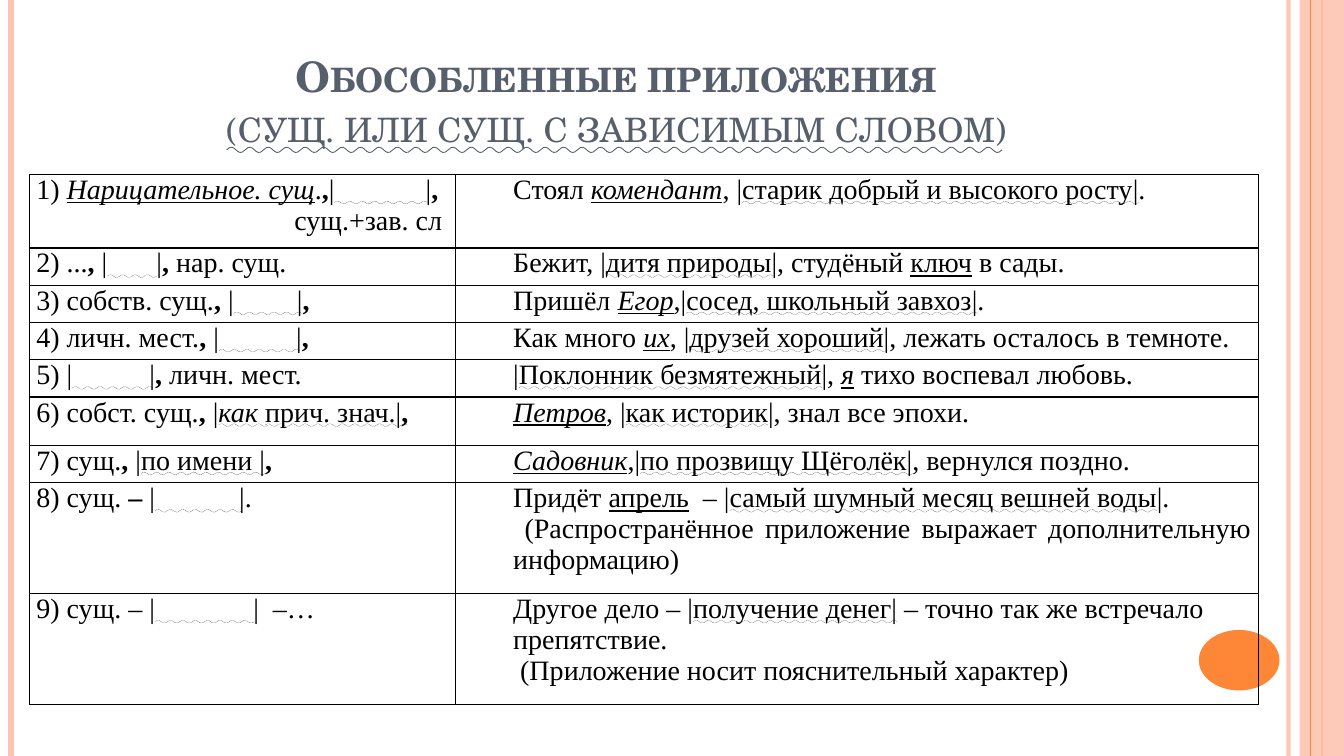
"""Builds a slide with a table of detached appositions in Russian."""
from dataclasses import dataclass
from lxml.etree import SubElement
from pptx import Presentation
from pptx.dml.color import RGBColor
from pptx.enum.shapes import MSO_CONNECTOR as Link, MSO_SHAPE as Form
from pptx.enum.text import MSO_ANCHOR as Anchor, MSO_UNDERLINE as Under, PP_ALIGN as Align
from pptx.oxml.ns import qn
from pptx.util import Inches, Pt


@dataclass(frozen=True)
class Theme:
    ink: str = "000000"
    slate: str = "575F6D"
    orange: str = "FE8637"
    peach: str = "FEC3AE"
    serif: str = "TeX Gyre Schola"
    body: str = "Times New Roman"
    head: int = 30
    text: int = 20
    rule: int = 1


THEME = Theme()
WIDE, HIGH = 13.33, 7.5
BOLD, LINE, WAVE, SLANT = "b", "u", "w", "i"
NAME = LINE + SLANT
COMMA = (",", BOLD)


def gap(size):
    """Return a blank of the given size with a wavy underline."""
    return " " * size, WAVE


TITLE = [("Обособленные приложения", BOLD), ("(сущ. или сущ. с зависимым словом)", WAVE)]
STRIPES = [(12.78, 3, THEME.peach, 93), (0.11, 4.5, THEME.peach, 100),
           (13.11, 1.5, THEME.orange, 100), (13, 0.75, THEME.orange, 100)]
BAND = (12.89, 0, 0.44, HIGH)
DISC = (11.89, 6.25, 0.8, 0.6)
HEADING = (0.67, 0.3, 10.89, 1.25)
GRID = (0.29, 1.73)
COLS = [4.23, 7.96]
STEP = 0.37
ROWS = [0.73] + [STEP] * 4 + [0.48, STEP, 1.1, 1.1]
PAD, INDENT, NOTE = 0.07, 0.5, 2.56

RULES = [
    [["1) ", ("Нарицательное. сущ", NAME), ".", COMMA, "|", gap(13), "|", COMMA],
     ["сущ.+зав. сл"]],
    [["2) ...", COMMA, " |", gap(7), "|", COMMA, " нар. сущ."]],
    [["3) собств. сущ.", COMMA, " |", gap(9), "|", COMMA]],
    [["4) личн. мест.", COMMA, " |", gap(11), "|", COMMA]],
    [["5) |", gap(11), "|", COMMA, " личн. мест."]],
    [["6) собст. сущ.", (", ", BOLD), "|", ("как ", WAVE + SLANT), ("прич. знач.|", WAVE), COMMA]],
    [["7) сущ.", COMMA, " |", ("по имени ", WAVE), "|", COMMA]],
    [["8) сущ. ", ("–", BOLD), " |", gap(12), "|."]],
    [["9) сущ. – |", gap(14), "|  –…"]],
]
SAMPLES = [
    [["Стоял ", ("комендант", NAME), ", |", ("старик добрый и высокого росту", WAVE), "|."]],
    [["Бежит, |", ("дитя природы", WAVE), "|, студёный ", ("ключ", LINE), " в сады."]],
    [["Пришёл ", ("Егор", NAME), ",|", ("сосед, школьный завхоз", WAVE), "|."]],
    [["Как много ", ("их", NAME), ", |", ("друзей хороший", WAVE), "|, лежать осталось в темноте."]],
    [["|", ("Поклонник безмятежный", WAVE), "|, ", ("я", NAME), " тихо воспевал любовь."]],
    [[("Петров", NAME), ", |", ("как историк", WAVE), "|, знал все эпохи."]],
    [[("Садовник", NAME), ",|", ("по прозвищу Щёголёк", WAVE), "|, вернулся поздно."]],
    [["Придёт ", ("апрель", LINE), "  – |", ("самый шумный месяц вешней воды", WAVE), "|."],
     [" (Распространённое приложение выражает дополнительную информацию)"]],
    [["Другое дело – |", ("получение денег|", WAVE), " – точно так же встречало препятствие."],
     [" (Приложение носит пояснительный характер)"]],
]


def tint(fill, color, alpha=100):
    fill.solid()
    fill.fore_color.rgb = RGBColor.from_string(color)
    if alpha < 100:
        tone = fill._xPr.find(qn("a:solidFill"))[0]
        SubElement(tone, qn("a:alpha"), val=str(alpha * 1000))


def stripe(slide, x, width, color, alpha):
    line = slide.shapes.add_connector(Link.STRAIGHT, Inches(x), 0, Inches(x), Inches(HIGH))
    line.line.width = Pt(width)
    tint(line.line.fill, color, alpha)
    SubElement(line._element.spPr, qn("a:effectLst"))


def shape(slide, form, box, color, alpha=100):
    item = slide.shapes.add_shape(form, *map(Inches, box))
    item.shadow.inherit = False
    item.line.fill.background()
    tint(item.fill, color, alpha)


def write(para, text, style, face, size, color):
    run = para.add_run()
    run.text = text
    font = run.font
    font.name, font.size = face, Pt(size)
    font.color.rgb = RGBColor.from_string(color)
    font.bold, font.italic = BOLD in style, SLANT in style
    font.underline = Under.WAVY_LINE if WAVE in style else LINE in style
    return run


def heading(slide):
    frame = slide.shapes.add_textbox(*map(Inches, HEADING)).text_frame
    frame.word_wrap, frame.vertical_anchor = True, Anchor.BOTTOM
    para = frame.paragraphs[0]
    para.alignment = Align.CENTER
    for row, (text, style) in enumerate(TITLE):
        if row:
            para.add_line_break()
        run = write(para, text, style, THEME.serif, THEME.head, THEME.slate)
        run.font._element.set("cap", "small")


def border(cell):
    props = cell._tc.get_or_add_tcPr()
    for side in "LRTB":
        edge = SubElement(props, qn(f"a:ln{side}"), w=str(Pt(THEME.rule)))
        SubElement(SubElement(edge, qn("a:solidFill")), qn("a:srgbClr"), val=THEME.ink)


def fill_cell(cell, paras, indent, align):
    border(cell)
    cell.fill.background()
    cell.margin_left = cell.margin_right = Inches(PAD)
    cell.margin_top = cell.margin_bottom = 0
    frame = cell.text_frame
    for row, parts in enumerate(paras):
        para = frame.add_paragraph() if row else frame.paragraphs[0]
        para.alignment = align
        props = para._p.get_or_add_pPr()
        props.set("marL", str(Inches(indent[min(row, 1)])))
        props.set("indent", "0")
        for part in parts:
            text, style = (part, "") if isinstance(part, str) else part
            write(para, text, style, THEME.body, THEME.text, THEME.ink)


def chart_rules(slide):
    size = Inches(sum(COLS)), Inches(sum(ROWS))
    table = slide.shapes.add_table(len(ROWS), len(COLS), *map(Inches, GRID), *size).table
    table.first_row = table.horz_banding = False
    for col, width in zip(table.columns, COLS):
        col.width = Inches(width)
    for row, (height, rule, sample) in enumerate(zip(ROWS, RULES, SAMPLES)):
        table.rows[row].height = Inches(height)
        last = row == len(ROWS) - 1
        fill_cell(table.cell(row, 0), rule, (0, NOTE), Align.LEFT)
        fill_cell(table.cell(row, 1), sample, (INDENT, INDENT), Align.LEFT if last else Align.JUSTIFY)


def main():
    deck = Presentation()
    deck.slide_width, deck.slide_height = Inches(WIDE), Inches(HIGH)
    slide = deck.slides.add_slide(deck.slide_layouts[6])
    for item in STRIPES[:3]:
        stripe(slide, *item)
    shape(slide, Form.RECTANGLE, BAND, THEME.peach, 87)
    stripe(slide, *STRIPES[3])
    shape(slide, Form.OVAL, DISC, THEME.orange)
    heading(slide)
    chart_rules(slide)
    deck.save("out.pptx")


if __name__ == "__main__":
    main()
